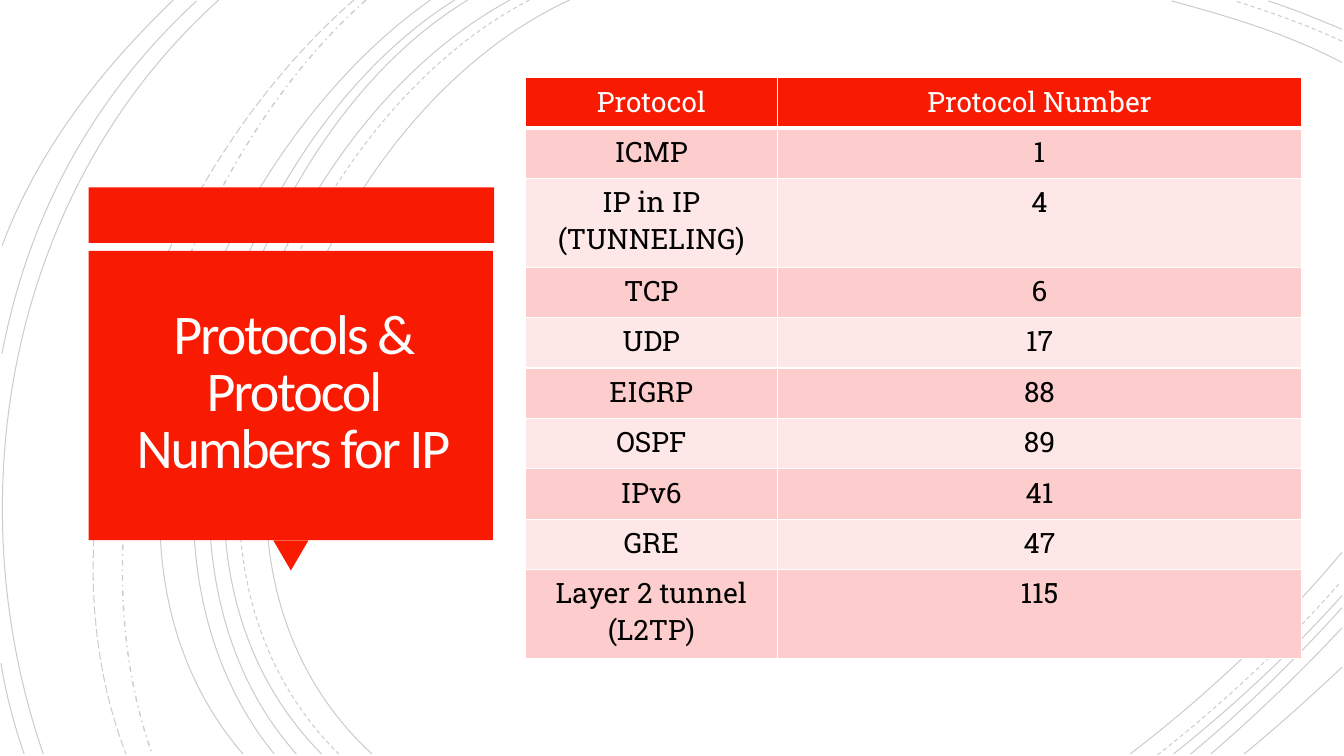
from dataclasses import dataclass

from lxml import etree
from pptx import Presentation
from pptx.dml.color import RGBColor as RGB
from pptx.enum.dml import MSO_LINE as DASH
from pptx.enum.shapes import MSO_SHAPE as SHAPE
from pptx.enum.text import MSO_ANCHOR as ANCHOR, MSO_AUTO_SIZE as FIT, PP_ALIGN as ALIGN
from pptx.oxml import parse_xml
from pptx.oxml.ns import nsdecls, qn
from pptx.util import Inches, Pt


@dataclass(frozen=True)
class Theme:
    accent: str = "F81B02"
    bands: tuple = ("FCCDCC", "FEE8E7")
    white: str = "FFFFFF"
    title_ink: str = "FFFEFF"
    ink: str = "000000"
    title_font: str = "Calibri"
    table_font: str = "Roboto Slab"
    title_size: int = 40
    table_size: int = 20
    title_spacing: float = -1.5
    arc_alpha: int = 20


ARCS = [
    ((5.65, 0), (3.15, 1.15), (1.43, 5.4), (3.69, 7.48)),
    ((13.31, 0.62), (12.78, 0.34), (12.18, 0.16), (11.62, 0.01)),
    ((11.21, 7.48), (11.97, 6.9), (12.69, 6.22), (13.31, 5.48)),
    ((5.06, 0), (2.7, 1.27), (1.1, 5.37), (3.19, 7.48)),
    ((13.31, 0.29), (13.07, 0.19), (12.83, 0.09), (12.58, 0.01)),
    ((11.64, 7.48), (12.23, 7.01), (12.8, 6.48), (13.31, 5.91)),
    ((4.64, 0), (2.44, 1.33), (1.1, 5.41), (2.94, 7.48)),
    ((11.81, 7.48), (12.34, 7.04), (12.84, 6.55), (13.31, 6.03)),
    ((4.51, 0), (2.31, 1.38), (0.97, 5.33), (2.72, 7.48)),
    ((12.01, 7.48), (12.46, 7.09), (12.9, 6.67), (13.31, 6.23)),
    ((4.27, 0), (2.17, 1.47), (0.53, 5.29), (2.41, 7.48)),
    ((12.34, 7.48), (12.67, 7.21), (12.99, 6.92), (13.31, 6.62)),
    ((2.17, 0), (0.11, 1.85), (-0.46, 4.9), (0.43, 7.48)),
    ((1.95, 0.01), (0.92, 0.96), (0.28, 2.14), (0.02, 3.51)),
    ((0.01, 6.58), (0.06, 6.89), (0.14, 7.19), (0.24, 7.48)),
    ((1.72, 0), (1, 0.69), (0.37, 1.5), (0.02, 2.44)),
]
DASHED_ARCS = [
    ((5.25, 0), (2.85, 1.25), (1.23, 5.37), (3.36, 7.48)),
    ((13.31, 0.41), (12.97, 0.25), (12.6, 0.12), (12.25, 0.01)),
    ((11.48, 7.49), (12.13, 6.98), (12.75, 6.4), (13.3, 5.77)),
]
DASH_DOT_ARC = ((3.63, 0), (1.76, 1.66), (0.65, 5.09), (1.51, 7.48))
LONG_DASH_ARC = ((3.51, 0), (1.57, 1.69), (0.29, 4.99), (1.25, 7.48))

PROTOCOLS = [
    ("Protocol", "Protocol Number"),
    ("ICMP", "1"),
    ("IP in IP (TUNNELING)", "4"),
    ("TCP", "6"),
    ("UDP", "17"),
    ("EIGRP", "88"),
    ("OSPF", "89"),
    ("IPv6", "41"),
    ("GRE", "47"),
    ("Layer 2 tunnel (L2TP)", "115"),
]


class SlideBuilder:
    def __init__(self, slide, theme):
        self.slide, self.theme = slide, theme

    def arc(self, points, dash=DASH.SOLID, width=0.75):
        start, *rest = [(Inches(x), Inches(y)) for x, y in points]
        fb = self.slide.shapes.build_freeform(*start)
        fb.add_line_segments(rest, close=False)
        sp = fb.convert_to_shape()
        outline = sp._element.find(".//" + qn("a:path"))
        bezier = etree.SubElement(outline, qn("a:cubicBezTo"))
        for segment in outline.findall(qn("a:lnTo")):
            bezier.append(segment[0])
            outline.remove(segment)
        sp.shadow.inherit = False
        sp.fill.background()
        sp.line.color.rgb = RGB.from_string(self.theme.ink)
        sp.line.width = Pt(width)
        sp.line.dash_style = dash
        color = sp.line._ln.find(".//" + qn("a:srgbClr"))
        etree.SubElement(color, qn("a:alpha")).set("val", str(self.theme.arc_alpha * 1000))

    def block(self, kind, left, top, width, height, rotation=0):
        sp = self.slide.shapes.add_shape(
            kind, Inches(left), Inches(top), Inches(width), Inches(height))
        sp.shadow.inherit = False
        sp.fill.solid()
        sp.fill.fore_color.rgb = RGB.from_string(self.theme.accent)
        sp.line.fill.background()
        sp.rotation = rotation

    def style(self, p, font, size, color):
        p.alignment = ALIGN.CENTER
        p.font.name = font
        p.font.size = Pt(size)
        p.font.bold = False
        p.font.color.rgb = RGB.from_string(color)

    def title(self, text, left, top, width, height, inset):
        th = self.theme
        sp = self.slide.shapes.title
        sp.left, sp.top, sp.width, sp.height = map(Inches, (left, top, width, height))
        self.slide.shapes._spTree.append(sp._element)
        tf = sp.text_frame
        tf.text = text
        tf.word_wrap = True
        tf.auto_size = FIT.NONE
        tf.vertical_anchor = ANCHOR.MIDDLE
        tf.margin_left = tf.margin_right = tf.margin_top = tf.margin_bottom = Inches(inset)
        p = tf.paragraphs[0]
        p.line_spacing = 0.85
        self.style(p, th.title_font, th.title_size, th.title_ink)
        p._p.pPr.find(qn("a:defRPr")).set("spc", str(int(th.title_spacing * 100)))

    def header_borders(self, cell):
        tcPr = cell._tc.get_or_add_tcPr()
        for side, width in (("L", 1), ("R", 1), ("T", 1), ("B", 3)):
            tcPr.append(parse_xml(
                f'<a:ln{side} {nsdecls("a")} w="{Pt(width)}"><a:solidFill>'
                f'<a:srgbClr val="{self.theme.white}"/></a:solidFill></a:ln{side}>'))

    def table(self, rows, left, top, widths, heights):
        th = self.theme
        table = self.slide.shapes.add_table(
            len(rows), len(widths), Inches(left), Inches(top),
            Inches(sum(widths)), Inches(sum(heights))).table
        for column, width in zip(table.columns, widths):
            column.width = Inches(width)
        for r, (row, height) in enumerate(zip(rows, heights)):
            table.rows[r].height = Inches(height)
            header = r == 0
            fill = th.accent if header else th.bands[(r - 1) % 2]
            for c, text in enumerate(row):
                cell = table.cell(r, c)
                cell.text = text
                if header:
                    self.header_borders(cell)
                cell.fill.solid()
                cell.fill.fore_color.rgb = RGB.from_string(fill)
                self.style(cell.text_frame.paragraphs[0], th.table_font, th.table_size,
                           th.white if header else th.ink)


def main():
    prs = Presentation()
    prs.slide_width, prs.slide_height = Inches(13.33), Inches(7.5)
    s = SlideBuilder(prs.slides.add_slide(prs.slide_layouts[5]), Theme())

    for points in ARCS:
        s.arc(points)
    for points in DASHED_ARCS:
        s.arc(points, DASH.DASH)
    s.arc(DASH_DOT_ARC, DASH.DASH_DOT, 1)
    s.arc(LONG_DASH_ARC, DASH.LONG_DASH)

    s.block(SHAPE.RECTANGLE, 0.88, 1.86, 4.02, 0.55)
    s.block(SHAPE.ISOSCELES_TRIANGLE, 2.71, 5.36, 0.35, 0.3, rotation=180)
    s.block(SHAPE.RECTANGLE, 0.88, 2.49, 4.01, 2.87)
    s.title("Protocols & Protocol Numbers for IP", 0.97, 2.57, 3.88, 2.69, inset=0.25)

    heights = [0.88 if "(" in name else 0.5 for name, _ in PROTOCOLS]
    s.table(PROTOCOLS, 5.21, 0.77, (2.5, 5.2), heights)

    prs.save("out.pptx")


if __name__ == "__main__":
    main()
